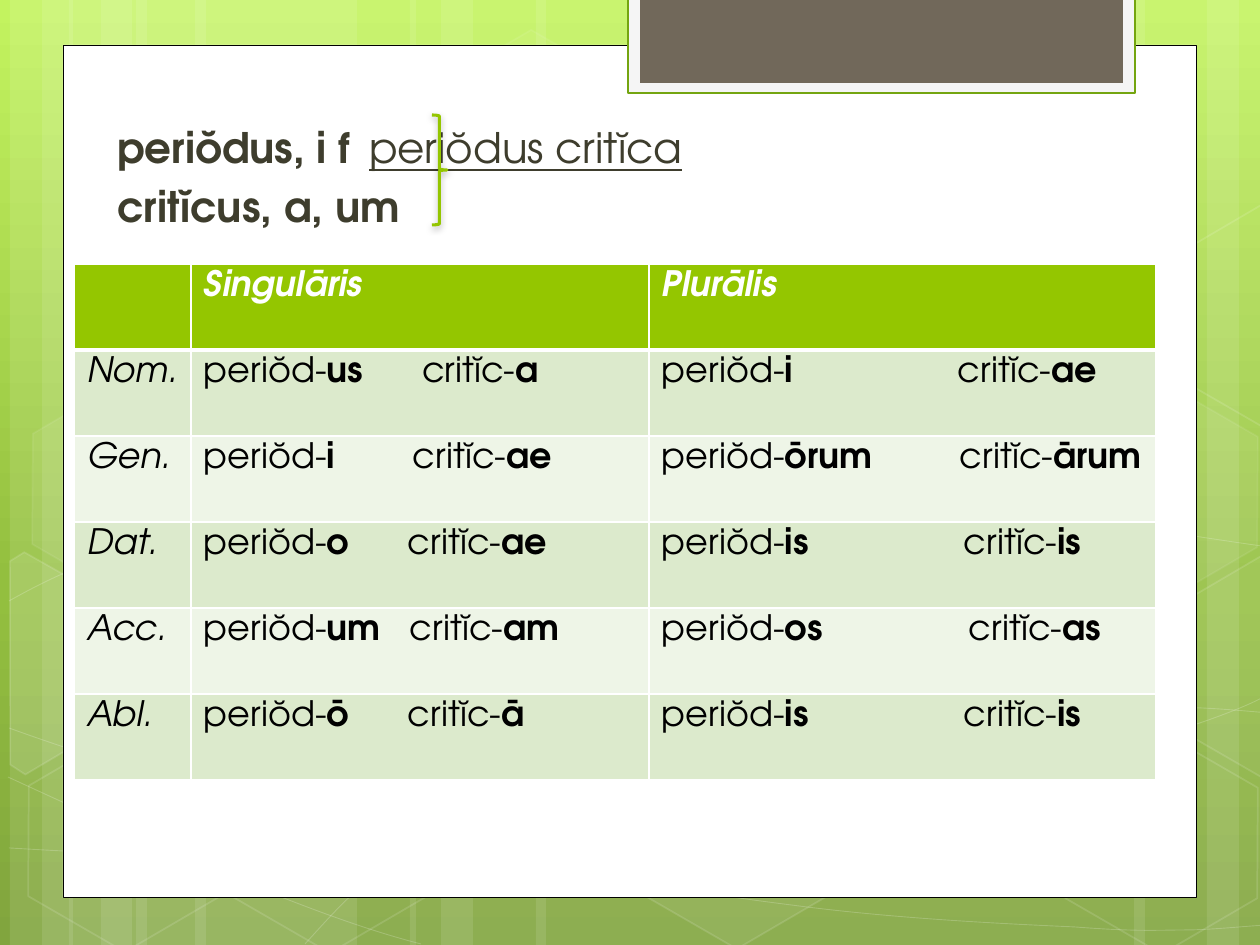
from dataclasses import dataclass
import math
from lxml import etree
from pptx import Presentation
from pptx import util as u
from pptx.dml.color import RGBColor
from pptx.enum import shapes, text
from pptx.oxml.ns import qn

PX = 914400 / 126
KIND = shapes.MSO_SHAPE


@dataclass(frozen=True)
class Theme:
    font: str = "TeX Gyre Adventor"
    head: int = 24
    cell: int = 20
    white: str = "FFFFFF"
    black: str = "000000"
    ink: str = "3E3D2D"
    lime: str = "94C600"
    leaf: str = "74A510"
    pale: str = "F5F5F5"
    stone: str = "71685A"
    bands: tuple = ("DCEACC", "EEF5E7")
    sky: tuple = ((0, "C3F35F"), (62, "93BF3F"), (100, "81A53E"))


T = Theme()

BARS = {221: (136, 195, 924), 63: (10, 69, 410, 1207),
        105: (42, 101, 441, 1134), 388: (536,)}

CURVES = [
    [(9, 848), (77, 852), (145, 856), (239, 854), (334, 853), (451, 851), (577, 838),
     (703, 825), (882, 801), (998, 777), (1113, 753), (1231, 717), (1269, 694)],
    [(9, 601), (45, 581), (82, 562), (152, 543), (224, 524), (326, 499), (437, 488),
     (549, 478), (685, 478), (824, 488), (963, 498), (1193, 537), (1269, 547)],
    [(8, 777), (160, 847), (311, 916), (421, 944)],
    [(9, 728), (48, 742), (88, 756), (161, 776), (234, 795), (344, 827), (450, 848),
     (554, 869), (687, 892), (791, 905), (896, 919), (1008, 924), (1075, 927),
     (1140, 932), (1158, 930), (1191, 930), (1223, 929), (1246, 926), (1269, 925)],
    [(305, 944), (328, 919), (350, 893), (381, 871), (411, 848), (454, 823), (489, 805),
     (524, 788), (546, 780), (592, 767), (638, 754), (722, 737), (766, 728),
     (811, 719), (818, 719), (857, 717), (896, 713), (958, 709), (1000, 708),
     (1045, 707), (1116, 708), (1116, 708), (1116, 708), (1201, 708), (1201, 708),
     (1223, 709), (1245, 711), (1268, 713)],
]

HEXES = [(421, 45, 4, 8), (626, 742, 6, 12), (14, 745, 0, 12), (18, 393, 7, 8),
         (219, 746, 0, 12), (949, 571, 10, 12), (1051, 747, 0, 12), (1051, 396, 7, 8)]

LEFT = [(10, 561), (24, 552), (121, 607), (120, 718), (25, 774), (10, 765)]
RIGHT = [(1167, 611), (1261, 556), (1271, 562), (1271, 772), (1263, 777), (1167, 722)]
UPPER = [(x, y - 351) for x, y in RIGHT]
SLABS = [(LEFT, (45, 674), 10), (RIGHT, (1241, 655), 4), (UPPER, (1241, 304), 0)]

CASES = [
    ("Nom.", ("us", "a", 218), ("i", "ae", 296)),
    ("Gen.", ("i", "ae", 209), ("ōrum", "ārum", 298)),
    ("Dat.", ("o", "ae", 204), ("is", "is", 302)),
    ("Acc.", ("um", "am", 206), ("os", "as", 307)),
    ("Abl.", ("ō", "ā", 204), ("is", "is", 302)),
]


def px(n):
    return u.Emu(round(n * PX))


def rgb(tone):
    return RGBColor.from_string(tone)


def node(root, tag, **attrs):
    return etree.SubElement(root, qn(tag), {k: str(v) for k, v in attrs.items()})


def fade(root, alpha):
    if alpha < 100:
        node(root.find(".//" + qn("a:srgbClr")), "a:alpha", val=alpha * 1000)


def paint(shape, fill=None, line=None, width=1, clear=100, faint=100):
    shape.shadow.inherit = False
    props = shape.element.spPr
    if fill and clear:
        shape.fill.solid()
        shape.fill.fore_color.rgb = rgb(fill)
        fade(props.find(qn("a:solidFill")), clear)
    else:
        shape.fill.background()
    if line:
        shape.line.color.rgb = rgb(line)
        shape.line.width = u.Pt(width)
        fade(props.find(qn("a:ln")), faint)
    else:
        shape.line.fill.background()
    return shape


def block(slide, kind, box, **look):
    return paint(slide.shapes.add_shape(kind, *map(px, box)), **look)


def trace(slide, points, close, **look):
    pen = slide.shapes.build_freeform(*points[0], scale=PX)
    pen.add_line_segments(points[1:], close=close)
    return paint(pen.convert_to_shape(), **look)


def curve(slide, points, **look):
    shape = trace(slide, points, False, **look)
    steps = list(shape.element.spPr.iter(qn("a:lnTo")))
    route = steps[0].getparent()
    for i in range(0, len(steps), 3):
        arc = node(route, "a:cubicBezTo")
        for step in steps[i:i + 3]:
            arc.append(step[0])
            route.remove(step)


def turn(points, mid, angle):
    cos, sin = math.cos(math.radians(angle)), math.sin(math.radians(angle))
    shifts = [(x - mid[0], y - mid[1]) for x, y in points]
    return [(mid[0] + x * cos - y * sin, mid[1] + x * sin + y * cos) for x, y in shifts]


def write(para, runs, size, tone, tab=0):
    for words, style in runs:
        run = para.add_run()
        run.text = words
        font = run.font
        font.name, font.size = T.font, u.Pt(size)
        font.color.rgb = rgb(tone)
        font.bold, font.italic, font.underline = ("b" in style, "i" in style, "u" in style)
    if tab:
        tabs = node(para._p.get_or_add_pPr(), "a:tabLst")
        node(tabs, "a:tab", pos=px(tab), algn="l")


def sky(slide):
    fill = slide.background.fill
    fill.gradient()
    fill.gradient_angle = 270
    stops = slide.element.find(".//" + qn("a:gsLst"))
    stops.clear()
    for pos, tone in T.sky:
        node(node(stops, "a:gs", pos=pos * 1000), "a:srgbClr", val=tone)


def scene(slide):
    sky(slide)
    for wide, lefts in BARS.items():
        for x in lefts:
            block(slide, KIND.RECTANGLE, (x, 0, wide, 945), fill=T.white, clear=10)
    for points in CURVES:
        curve(slide, points, line=T.white, width=0.5, faint=20)
    for x, y, clear, faint in HEXES:
        cell = block(slide, KIND.HEXAGON, (x, y, 221, 192), fill=T.white,
                     line=T.white, clear=clear, faint=faint)
        cell.adjustments[0] = 0.285
        cell.rotation = 30
    for points, mid, clear in SLABS:
        slab = trace(slide, turn(points, mid, -30), True, fill=T.white,
                     line=T.white, clear=clear, faint=12)
        slab.rotation = 30
    block(slide, KIND.RECTANGLE, (63, 45, 1134, 853), fill=T.white, line=T.black, width=0.5)
    block(slide, KIND.RECTANGLE, (628, -3, 507, 96), fill=T.pale, line=T.leaf, width=1.25)
    block(slide, KIND.RECTANGLE, (640, -3, 483, 86), fill=T.stone)


def heading(slide):
    title = slide.shapes.title
    title.element.getparent().append(title.element)
    title.left, title.top, title.width, title.height = map(px, (94, 115, 1081, 116))
    frame = title.text_frame
    frame.word_wrap = True
    frame.auto_size = text.MSO_AUTO_SIZE.NONE
    frame.vertical_anchor = text.MSO_ANCHOR.TOP
    frame.margin_left = px(23)
    first, second = frame.paragraphs[0], frame.add_paragraph()
    for para in (first, second):
        para.alignment = text.PP_ALIGN.LEFT
        para.space_before = u.Pt(T.head * 0.2)
    write(first, [("periŏdus, i f\t", "b"), ("periŏdus critĭca", "u")], T.head, T.ink, 252)
    write(second, [("critĭcus, a, um", "b")], T.head, T.ink)


def fill_cell(cell, runs, fill, tone, tab=0, base=1):
    cell.fill.solid()
    cell.fill.fore_color.rgb = rgb(fill)
    cell.margin_left, cell.margin_right = px(13), px(9)
    cell.margin_top, cell.margin_bottom = px(7), 0
    write(cell.text_frame.paragraphs[0], runs, T.cell, tone, tab)
    props = cell._tc.get_or_add_tcPr()
    sides = (("a:lnL", 1), ("a:lnR", 1), ("a:lnT", 1), ("a:lnB", base))
    for i, (side, width) in enumerate(sides):
        edge = node(props, side, w=u.Pt(width))
        node(node(edge, "a:solidFill"), "a:srgbClr", val=T.white)
        props.insert(i, edge)


def forms(slide):
    rows = len(CASES) + 1
    grid = slide.shapes.add_table(rows, 3, *map(px, (74, 264, 1082, 86 * rows))).table
    grid.horz_banding = False
    for col, wide in zip(grid.columns, (117, 458, 507)):
        col.width = px(wide)
    for i, name in enumerate(("", "Singulāris", "Plurālis")):
        fill_cell(grid.cell(0, i), [(name, "bi")] if name else [], T.lime, T.white, base=3)
    for row, (name, *pairs) in enumerate(CASES, 1):
        band = T.bands[(row - 1) % 2]
        fill_cell(grid.cell(row, 0), [(name, "i")], band, T.black)
        for col, (noun, adj, tab) in enumerate(pairs, 1):
            runs = [("periŏd-", ""), (noun + "\t", "b"), ("critĭc-", ""), (adj, "b")]
            fill_cell(grid.cell(row, col), runs, band, T.black, tab)


def brace(slide):
    mark = block(slide, KIND.RIGHT_BRACE, (432, 115, 15, 110), line=T.lime, width=1.75)
    glow = node(mark.element.spPr.find(qn("a:effectLst")), "a:outerShdw", blurRad=u.Pt(4),
                dist=u.Pt(2), dir=5400000, rotWithShape=0)
    node(glow, "a:srgbClr", val=T.black)
    fade(glow, 28)


def main():
    deck = Presentation()
    deck.slide_width, deck.slide_height = px(1260), px(945)
    slide = deck.slides.add_slide(deck.slide_layouts[5])
    scene(slide)
    heading(slide)
    forms(slide)
    brace(slide)
    deck.save("out.pptx")


if __name__ == "__main__":
    main()
